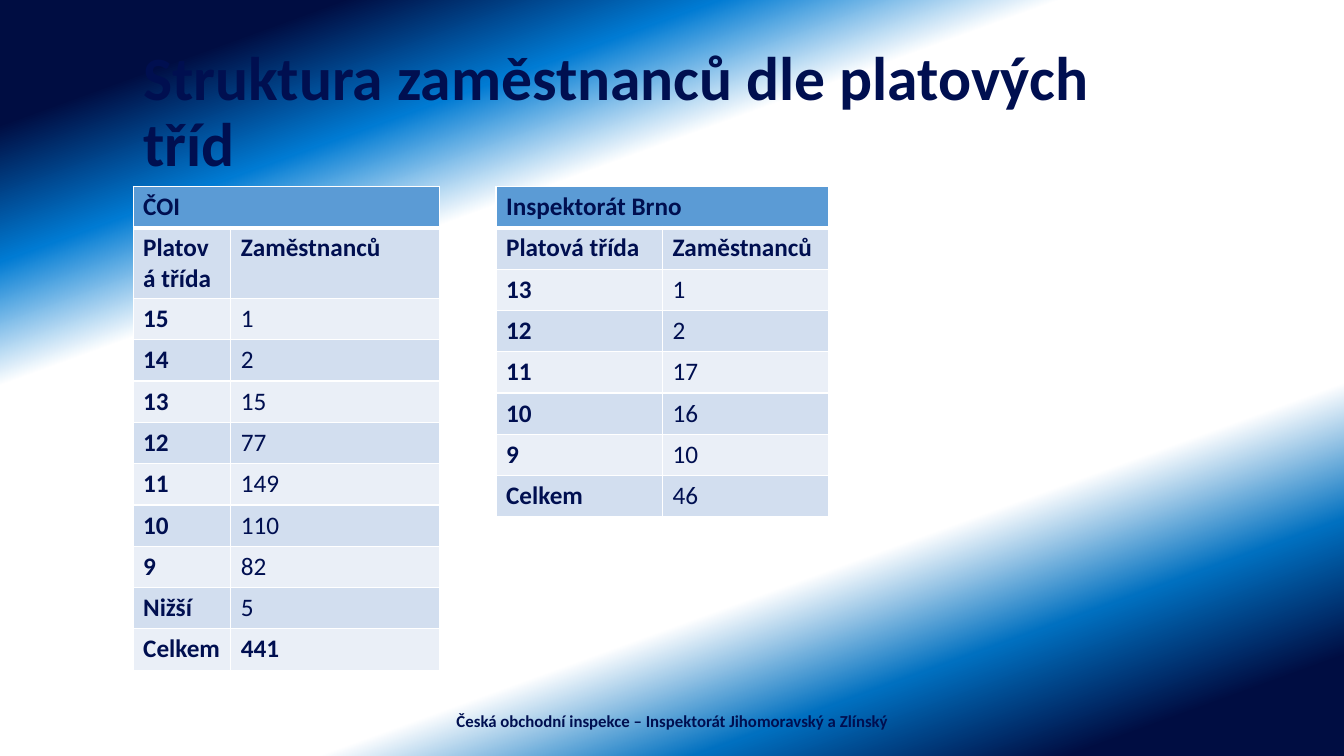
from dataclasses import dataclass

from lxml.etree import SubElement
from pptx import Presentation
from pptx.dml.color import RGBColor
from pptx.enum.text import MSO_ANCHOR, MSO_AUTO_SIZE, PP_ALIGN
from pptx.oxml.ns import qn
from pptx.slide import Slide
from pptx.table import _Cell
from pptx.text.text import TextFrame
from pptx.util import Inches, Pt

FONT = "Calibri"
NAVY = RGBColor(0x00, 0x0F, 0x50)
WHITE = RGBColor(0xFF, 0xFF, 0xFF)
HEADER_BLUE = RGBColor(0x5B, 0x9B, 0xD5)
BAND_DARK = RGBColor(0xD2, 0xDE, 0xEF)
BAND_LIGHT = RGBColor(0xEA, 0xEF, 0xF7)
DEEP_NAVY = RGBColor(0x00, 0x0D, 0x42)
SKY_BLUE = RGBColor(0x00, 0x7B, 0xD3)
MID_BLUE = RGBColor(0x00, 0x70, 0xC0)

ROW_HEIGHT = 0.41
TABLES_TOP = 1.85
COLUMN_HEADINGS = ("Platová třída", "Zaměstnanců")


@dataclass(frozen=True)
class GradientStop:
    position: int
    color: RGBColor
    opacity: int = 100


@dataclass(frozen=True)
class PayGradeTable:
    heading: str
    left: float
    column_widths: tuple[float, float]
    grades: tuple[tuple[str, str], ...]
    bold_total: bool = False


BACKGROUND_STOPS = (
    GradientStop(10, DEEP_NAVY),
    GradientStop(21, SKY_BLUE, 93),
    GradientStop(31, WHITE),
    GradientStop(70, WHITE),
    GradientStop(81, MID_BLUE),
    GradientStop(92, DEEP_NAVY),
)

PAY_GRADE_TABLES = (
    PayGradeTable(
        "ČOI", 1.32, (0.97, 2.07),
        (("15", "1"), ("14", "2"), ("13", "15"), ("12", "77"), ("11", "149"),
         ("10", "110"), ("9", "82"), ("Nižší", "5"), ("Celkem", "441")),
        bold_total=True,
    ),
    PayGradeTable(
        "Inspektorát Brno", 4.92, (1.65, 1.65),
        (("13", "1"), ("12", "2"), ("11", "17"), ("10", "16"), ("9", "10"),
         ("Celkem", "46")),
    ),
)


def paint_background(slide: Slide, stops: tuple[GradientStop, ...]) -> None:
    fill = slide.background.fill
    fill.gradient()
    fill.gradient_angle = 290  # counter-clockwise
    stop_list = slide.element.find(".//" + qn("a:gsLst"))
    stop_list.clear()
    for stop in stops:
        entry = SubElement(stop_list, qn("a:gs"), pos=str(stop.position * 1000))
        color = SubElement(entry, qn("a:srgbClr"), val=str(stop.color))
        if stop.opacity < 100:
            SubElement(color, qn("a:alpha"), val=str(stop.opacity * 1000))


def write_text(frame: TextFrame, text: str, size: int, bold: bool = True,
               align: PP_ALIGN = PP_ALIGN.LEFT) -> None:
    frame.text = text
    paragraph = frame.paragraphs[0]
    paragraph.alignment = align
    font = paragraph.font
    font.name, font.size, font.bold = FONT, Pt(size), bold
    font.color.rgb = NAVY


def style_cell(cell: _Cell, row: int) -> None:
    # Borders come before the fill in the cell properties
    properties = cell._tc.get_or_add_tcPr()
    widths = {"L": 1, "R": 1, "T": 3 if row == 1 else 1, "B": 3 if row == 0 else 1}
    for side, width in widths.items():
        line = SubElement(properties, qn(f"a:ln{side}"), w=str(Pt(width)))
        line_fill = SubElement(line, qn("a:solidFill"))
        SubElement(line_fill, qn("a:srgbClr"), val=str(WHITE))
    cell.fill.solid()
    band = BAND_DARK if row % 2 else BAND_LIGHT
    cell.fill.fore_color.rgb = HEADER_BLUE if row == 0 else band


def draw_pay_grades(slide: Slide, content: PayGradeTable) -> None:
    rows = ((content.heading, ""), COLUMN_HEADINGS, *content.grades)
    table = slide.shapes.add_table(
        len(rows), 2, Inches(content.left), Inches(TABLES_TOP),
        Inches(sum(content.column_widths)), Inches(ROW_HEIGHT * len(rows)),
    ).table
    for column, width in zip(table.columns, content.column_widths):
        column.width = Inches(width)
    table.cell(0, 0).merge(table.cell(0, 1))
    for row, texts in enumerate(rows):
        is_total = content.bold_total and row == len(rows) - 1
        for column, text in enumerate(texts):
            cell = table.cell(row, column)
            style_cell(cell, row)
            if not cell.is_spanned:
                bold = column == 0 or row < 2 or is_total
                write_text(cell.text_frame, text, 18, bold)


def main() -> None:
    presentation = Presentation()
    presentation.slide_width, presentation.slide_height = Inches(13.33), Inches(7.5)
    slide = presentation.slides.add_slide(presentation.slide_layouts[5])
    paint_background(slide, BACKGROUND_STOPS)

    # Title
    title = slide.shapes.title
    title.left, title.top = Inches(1.32), Inches(0.4)
    title.width, title.height = Inches(10.11), Inches(1.45)
    title_frame = title.text_frame
    title_frame.auto_size = MSO_AUTO_SIZE.NONE
    title_frame.vertical_anchor = MSO_ANCHOR.MIDDLE
    write_text(title_frame, "Struktura zaměstnanců dle platových tříd", 44)
    title_frame.paragraphs[0].line_spacing = 0.9

    # Footer
    footer = slide.shapes.add_textbox(Inches(4.42), Inches(6.95), Inches(4.5), Inches(0.4))
    footer.text_frame.word_wrap = True
    footer.text_frame.vertical_anchor = MSO_ANCHOR.MIDDLE
    write_text(footer.text_frame,
               "Česká obchodní inspekce – Inspektorát Jihomoravský a Zlínský",
               12, align=PP_ALIGN.CENTER)

    # Pay grade tables
    for content in PAY_GRADE_TABLES:
        draw_pay_grades(slide, content)

    presentation.save("out.pptx")


if __name__ == "__main__":
    main()
